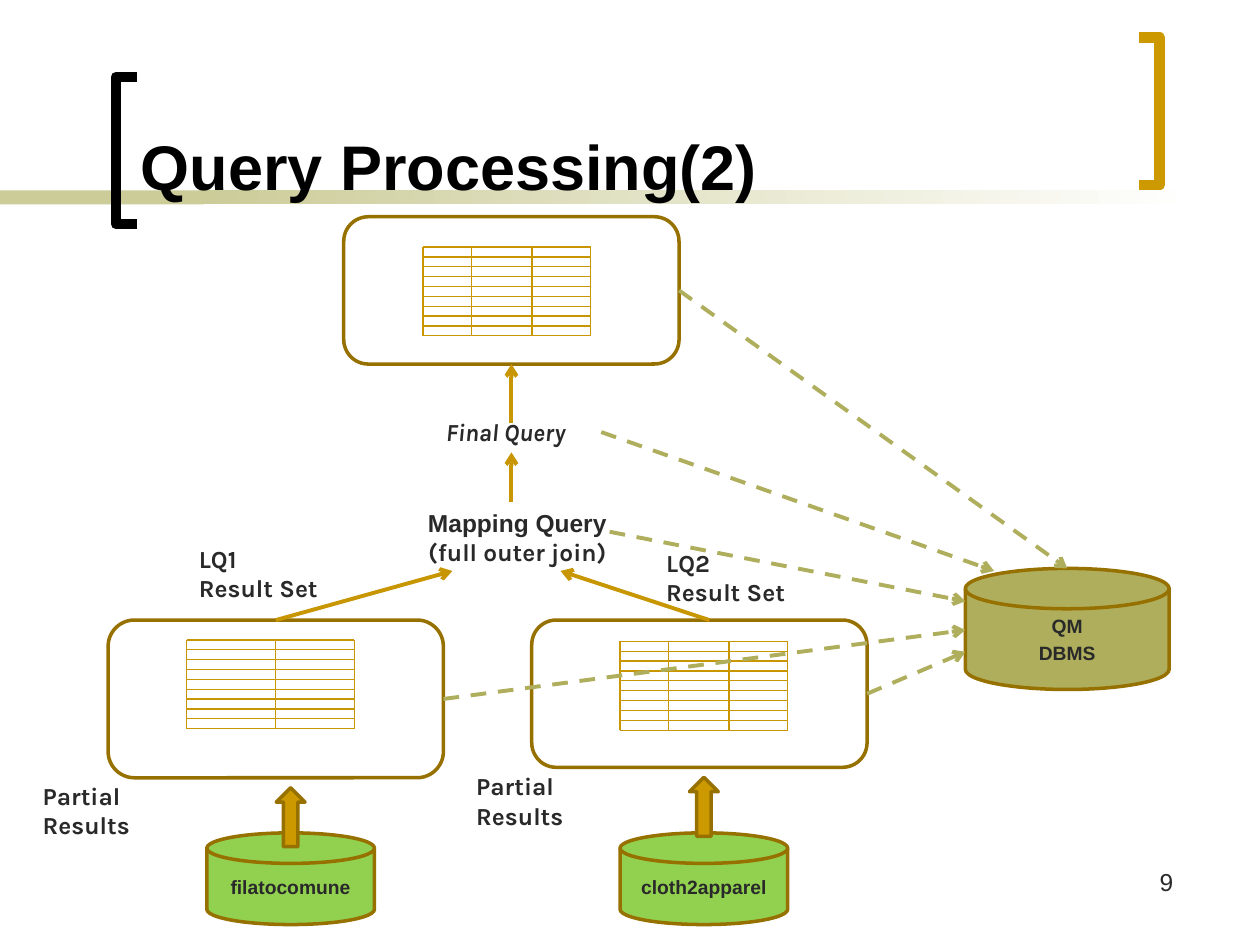
import pptx
import pptx.chart.data
import pptx.dml.color
import pptx.enum.dml
import pptx.enum.shapes
import pptx.enum.text
import pptx.oxml
import pptx.oxml.ns
import pptx.util

Cm = pptx.util.Cm
Pt = pptx.util.Pt
SHAPE = pptx.enum.shapes.MSO_SHAPE
ALIGN = pptx.enum.text.PP_ALIGN
ANCHOR = pptx.enum.text.MSO_ANCHOR

INK = "292929"
GOLD = "C89600"
BRIGHT_GOLD = "CC9900"
OUTLINE = "977100"
OLIVE = "AEAE5D"
GREEN = "92D050"
SAND = "CCCC99"
WHITE = "FFFFFF"


def color(value):
    """Turn a hex string into a colour."""
    return pptx.dml.color.RGBColor.from_string(value)


def write(frame, text, size=14, font="Karla", fill=INK, bold=True, italic=False,
          align=ALIGN.LEFT, anchor=ANCHOR.TOP, before=0, wrap=True):
    """Fill a text frame, one paragraph for each line of the text."""
    frame.word_wrap = wrap
    frame.vertical_anchor = anchor
    fonts = font if isinstance(font, list) else [font] * len(text.split("\n"))
    for number, (line, face) in enumerate(zip(text.split("\n"), fonts)):
        paragraph = frame.add_paragraph() if number else frame.paragraphs[0]
        paragraph.alignment = align
        paragraph.space_before = Pt(before)
        run = paragraph.add_run()
        run.text = line
        run.font.name = face
        run.font.size = Pt(size)
        run.font.bold = bold
        run.font.italic = italic
        run.font.color.rgb = color(fill)


def label(slide, box, text, **style):
    """Place a text box."""
    caption = slide.shapes.add_textbox(*map(Cm, box))
    write(caption.text_frame, text, **style)


def block(slide, kind, box, fill, outline=OUTLINE):
    """Place a filled preset shape with an optional outline."""
    shape = slide.shapes.add_shape(kind, *map(Cm, box))
    shape.shadow.inherit = False
    shape.fill.solid()
    shape.fill.fore_color.rgb = color(fill)
    if outline:
        shape.line.color.rgb = color(outline)
        shape.line.width = Pt(2)
    else:
        shape.line.fill.background()
    return shape


def line(slide, start, end, stroke=GOLD, width=0.75):
    """Draw a straight line between two points."""
    connector = slide.shapes.add_connector(
        pptx.enum.shapes.MSO_CONNECTOR.STRAIGHT, *map(Cm, start + end))
    connector.line.color.rgb = color(stroke)
    connector.line.width = Pt(width)
    properties = connector._element.spPr
    properties.append(pptx.oxml.parse_xml(
        "<a:effectLst %s/>" % pptx.oxml.ns.nsdecls("a")))
    return connector


def arrow(slide, start, end, stroke=GOLD, dashed=False):
    """Draw a line with an open arrowhead at its end."""
    connector = line(slide, start, end, stroke, 2.25)
    if dashed:
        connector.line.dash_style = pptx.enum.dml.MSO_LINE.DASH
    connector.line._get_or_add_ln().append(pptx.oxml.parse_xml(
        '<a:tailEnd %s type="arrow"/>' % pptx.oxml.ns.nsdecls("a")))
    return connector


def bracket(slide, box, stroke, opens_right):
    """Draw a square bracket inside a box."""
    left, top, width, height = box
    tip, spine = (left + width, left) if opens_right else (left, left + width)
    builder = slide.shapes.build_freeform(Cm(tip), Cm(top))
    corners = [(spine, top), (spine, top + height), (tip, top + height)]
    builder.add_line_segments([(Cm(x), Cm(y)) for x, y in corners], close=False)
    outline = builder.convert_to_shape()
    outline.shadow.inherit = False
    outline.fill.background()
    outline.line.color.rgb = color(stroke)
    outline.line.width = Pt(6)


def heading(slide, box, title):
    """Draw the band, the brackets and the title in the top region."""
    left, top, width, height = box
    band_top, band_height, split = top + 3.84, 0.28, 4.01
    block(slide, SHAPE.RECTANGLE, (left, band_top, split + 0.1, band_height), SAND, None)
    fade = block(slide, SHAPE.RECTANGLE,
                 (left + split, band_top, width - split, band_height), SAND, None)
    fade.fill.gradient()
    fade.fill.gradient_angle = 0
    for stop, shade in zip(fade.fill.gradient_stops, (SAND, WHITE)):
        stop.color.rgb = color(shade)
    bracket(slide, (left + 2.34, top + 1.55, 0.42, 2.97), "000000", True)
    bracket(slide, (left + 22.96, top + 0.76, 0.42, 2.97), BRIGHT_GOLD, False)
    label(slide, (left + 2.59, top + 0.28, 19.89, height - 0.28), title, size=36,
          font="Arial", fill="000000", anchor=ANCHOR.BOTTOM)


def result_set(slide, box, grid_left, grid_top, dividers):
    """Draw a rounded box holding a small empty grid of nine rows."""
    panel = block(slide, SHAPE.ROUNDED_RECTANGLE, box, WHITE)
    left, top = box[0] + grid_left, box[1] + grid_top
    width, height, rows = 3.38, 1.79, 9
    for row in range(rows + 1):
        y = top + height * row / rows
        line(slide, (left, y), (left + width, y))
    for share in (0, *dividers, 1):
        x = left + width * share
        line(slide, (x, top), (x, top + height))
    return panel


def cylinder(slide, box, text, fill):
    """Draw a database cylinder with its name."""
    database = block(slide, SHAPE.FLOWCHART_MAGNETIC_DISK, box, fill)
    write(database.text_frame, text, size=11, font="Arial", align=ALIGN.CENTER,
          anchor=ANCHOR.MIDDLE, before=2.2, wrap=False)


def local_source(slide, box, name, arrow_top):
    """Draw a local source and the block arrow rising from it."""
    left, top, width, height = box
    cylinder(slide, box, name, GREEN)
    block(slide, SHAPE.UP_ARROW, (left + width / 2 - 0.29, top + arrow_top, 0.58, 1.19),
          BRIGHT_GOLD)


def query_flow(slide, box, final_result, first_result):
    """Draw the queries that merge the result sets, with their arrows."""
    left, top, width, height = box
    axis = left + 2.56
    first = arrow(slide, (5.56, top + height), (9.12, 11.51))
    first.begin_connect(first_result, 0)
    arrow(slide, (14.3, top + height), (11.3, 11.51))
    label(slide, (left, top + 2.77, width, 1.45), "Mapping Query\n(full outer join)",
          font=["Arial", "Karla"], align=ALIGN.CENTER)
    label(slide, (left + 0.99, top + 0.94, 3.38, 0.86), "Final Query", italic=True)
    arrow(slide, (axis, top + 2.77), (axis, top + 1.78))
    last = arrow(slide, (axis, top + 1.19), (axis, top))
    last.end_connect(final_result, 2)


def storage_links(slide, box, results):
    """Draw the dashed arrows that lead into the central database."""
    left, top, width, height = box
    ends = [(left + width / 2, top), (left, top + 1.24), (left, top + 1.68)]
    for result, end in zip(results, ends):
        link = arrow(slide, (0, 0), end, OLIVE, True)
        link.begin_connect(result, 3)
    arrow(slide, (12.12, 8.71), (left + 0.58, top + 0.05), OLIVE, True)
    arrow(slide, (12.29, 10.72), (left, top + 0.66), OLIVE, True)


def main():
    """Build the slide and save it."""
    deck = pptx.Presentation()
    deck.slide_width, deck.slide_height = Cm(25.4), Cm(19.05)
    slide = deck.slides.add_slide(deck.slide_layouts[6])
    heading(slide, (0, 0, 24.13, 4.22), "Query Processing(2)")

    first_result = result_set(slide, (2.18, 12.5, 6.76, 3.18), 1.58, 0.4, (0.53,))
    second_result = result_set(slide, (10.72, 12.5, 6.76, 2.97), 1.78, 0.43, (0.29, 0.65))
    final_result = result_set(slide, (6.93, 4.37, 6.76, 2.97), 1.6, 0.61, (0.29, 0.65))

    database_box = (19.46, 11.46, 4.11, 2.44)
    cylinder(slide, database_box, "QM\nDBMS", OLIVE)
    local_source(slide, (4.17, 16.79, 3.38, 1.85), "filatocomune", -0.91)
    local_source(slide, (12.5, 16.79, 3.38, 1.85), "cloth2apparel", -1.12)

    for x, y in ((0.61, 15.62), (9.35, 15.42)):
        label(slide, (x, y, 2.36, 1.45), "Partial\nResults")
    for x, y, name in ((3.76, 10.84, "LQ1"), (13.18, 10.92, "LQ2")):
        label(slide, (x, y, 3.07, 1.45), name + "\nResult Set")

    query_flow(slide, (7.75, 7.34, 5.36, 5.16), final_result, first_result)
    storage_links(slide, database_box, (final_result, first_result, second_result))
    label(slide, (18.62, 17.35, 5.28, 1.27), "9", font="Arial", bold=False,
          align=ALIGN.RIGHT)
    deck.save("out.pptx")


if __name__ == "__main__":
    main()
